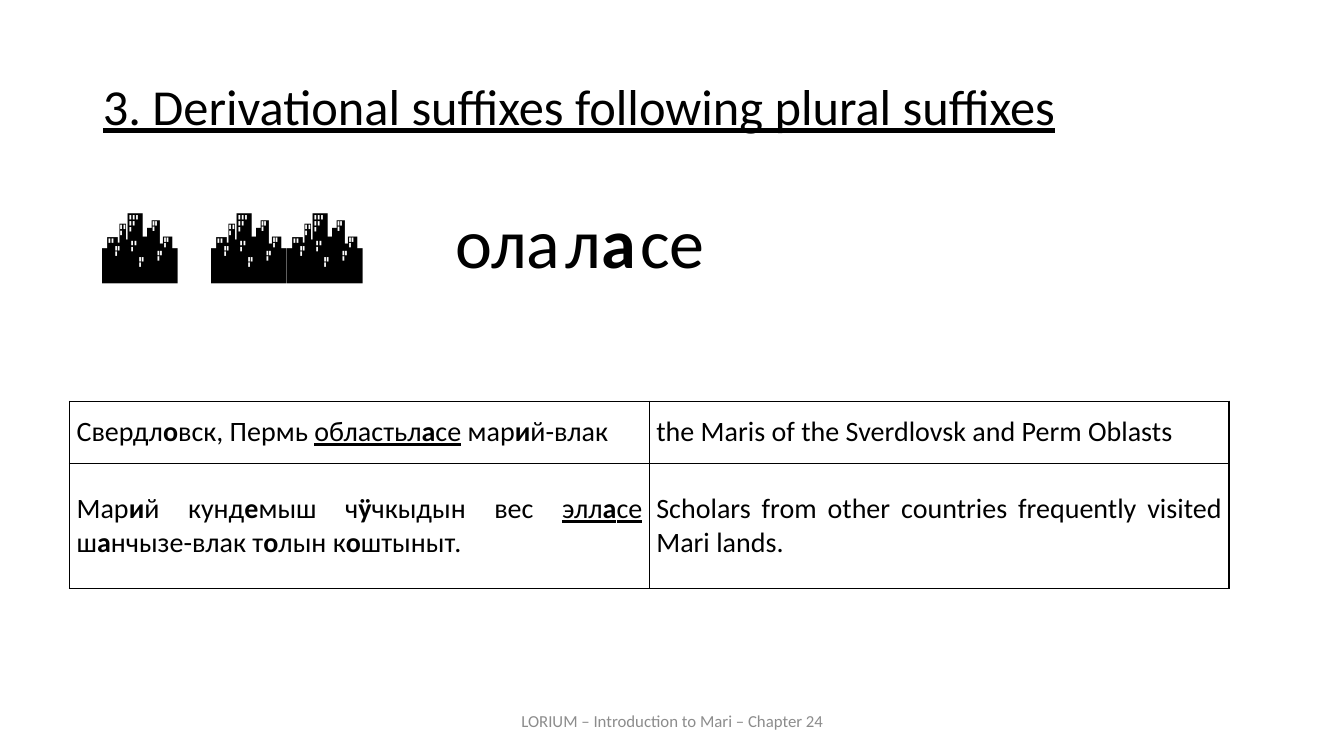
import pptx
import pptx.dml.color
import pptx.enum.text
import pptx.oxml
import pptx.oxml.ns
import pptx.util

BLACK = pptx.dml.color.RGBColor(0x00, 0x00, 0x00)
GREY = pptx.dml.color.RGBColor(0x8C, 0x8C, 0x8C)
ALIGN = pptx.enum.text.PP_ALIGN
ANCHOR = pptx.enum.text.MSO_ANCHOR
EMU_PER_PX = 9144
FONT = "Calibri"
BOLD_MARK = "*"
UNDERLINE_MARK = "_"


def px(length):
    return pptx.util.Emu(length * EMU_PER_PX)


class SlideBuilder:
    def __init__(self, deck):
        self.slide = deck.slides.add_slide(deck.slide_layouts[5])

    def add_span(self, para, text, size, color, bold, underline):
        if not text:
            return
        span = para.add_run()
        span.text = text
        span.font.name = FONT
        span.font.size = pptx.util.Pt(size)
        span.font.color.rgb = color
        span.font.bold = bold
        span.font.underline = underline

    def fill_para(self, para, marked_text, size, color=BLACK, align=ALIGN.LEFT):
        para.alignment = align
        underline = False
        for section in marked_text.split(UNDERLINE_MARK):
            bold = False
            for text in section.split(BOLD_MARK):
                self.add_span(para, text, size, color, bold, underline)
                bold = not bold
            underline = not underline

    def title(self, marked_text, bounds, size):
        title = self.slide.shapes.title
        title.left, title.top, title.width, title.height = map(px, bounds)
        frame = title.text_frame
        frame.auto_size = pptx.enum.text.MSO_AUTO_SIZE.NONE
        frame.vertical_anchor = ANCHOR.TOP
        para = frame.paragraphs[0]
        para.line_spacing = 0.9
        para.space_before = pptx.util.Pt(12)
        self.fill_para(para, marked_text, size, align=ALIGN.JUSTIFY)

    def text(self, marked_text, bounds, size, color=BLACK,
             align=ALIGN.LEFT, anchor=ANCHOR.TOP):
        box = self.slide.shapes.add_textbox(*map(px, bounds))
        frame = box.text_frame
        frame.word_wrap = True
        frame.vertical_anchor = anchor
        self.fill_para(frame.paragraphs[0], marked_text, size, color, align)

    def border(self, cell):
        properties = cell._tc.get_or_add_tcPr()
        for index, side in enumerate("LRTB"):
            line = pptx.oxml.parse_xml(
                f'<a:ln{side} {pptx.oxml.ns.nsdecls("a")} w="12700">'
                f'<a:solidFill><a:srgbClr val="{BLACK}"/></a:solidFill>'
                f'</a:ln{side}>')
            properties.insert(index, line)

    def table(self, rows, bounds, row_heights, size):
        frame = self.slide.shapes.add_table(
            len(rows), len(rows[0]), *map(px, bounds))
        table = frame.table
        table.first_row = table.horz_banding = False
        for row, height, texts in zip(table.rows, row_heights, rows):
            row.height = px(height)
            for cell, marked_text in zip(row.cells, texts):
                cell.fill.background()
                cell.vertical_anchor = ANCHOR.MIDDLE
                cell.margin_left = cell.margin_right = px(7)
                cell.margin_top = cell.margin_bottom = 0
                self.border(cell)
                self.fill_para(cell.text_frame.paragraphs[0], marked_text,
                               size, align=ALIGN.JUSTIFY)


def main():
    deck = pptx.Presentation()
    deck.slide_width, deck.slide_height = px(1333), px(750)
    page = SlideBuilder(deck)
    page.title("_3. Derivational suffixes following plural suffixes_",
               (92, 76, 1150, 83), 36)
    page.text("LORIUM – Introduction to Mari – Chapter 24",
              (442, 695, 450, 40), 12, GREY, ALIGN.CENTER, ANCHOR.MIDDLE)
    page.table(
        [("Свердл*о*вск, Пермь _областьл*а*се_ мар*и*й-влак",
          "the Maris of the Sverdlovsk and Perm Oblasts"),
         ("Мар*и*й кунд*е*мыш ч*ӱ*чкыдын вес _элл*а*се_ "
          "ш*а*нчызе-влак т*о*лын к*о*штыныт.",
          "Scholars from other countries frequently visited Mari lands.")],
        (69, 398, 1150, 186), (62, 124), 20)
    city = "🏙️"
    page.text(city, (92, 185, 375, 101), 54)
    page.text(city * 2, (200, 185, 230, 101), 54)
    for left, morpheme in ((442, "ола"), (551, "л*а*"), (625, "се")):
        page.text(morpheme, (left, 192, 144, 94), 50)
    deck.save("out.pptx")


if __name__ == "__main__":
    main()
